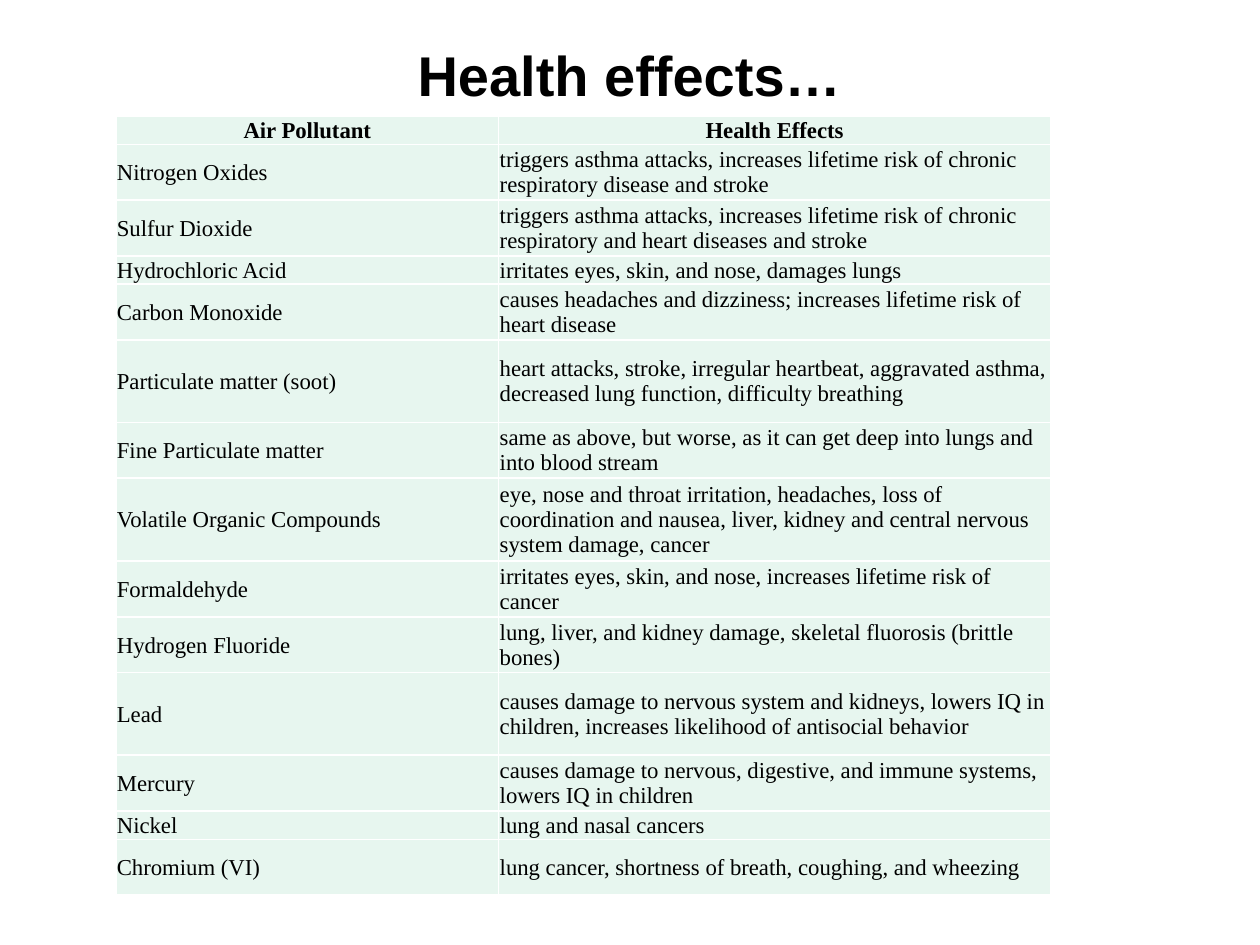
from lxml import etree
from pptx import Presentation
from pptx.dml.color import RGBColor
from pptx.enum import text
from pptx.oxml import ns
from pptx.util import Pt

BLACK = RGBColor(0x00, 0x00, 0x00)
MINT = RGBColor(0xE7, 0xF6, 0xEF)
WHITE = RGBColor(0xFF, 0xFF, 0xFF)

# Row heights: one, two or three lines of text
SHORT, MEDIUM, TALL = 15.9, 31.7, 47.1
COLUMN_WIDTHS = (218.8, 315.2)

HEADINGS = ("Air Pollutant", "Health Effects")
POLLUTANTS = [
    ("Nitrogen Oxides", "triggers asthma attacks, increases lifetime risk of "
     "chronic respiratory disease and stroke", MEDIUM),
    ("Sulfur Dioxide", "triggers asthma attacks, increases lifetime risk of "
     "chronic respiratory and heart diseases and stroke", MEDIUM),
    ("Hydrochloric Acid", "irritates eyes, skin, and nose, damages lungs", SHORT),
    ("Carbon Monoxide", "causes headaches and dizziness; increases lifetime "
     "risk of heart disease", MEDIUM),
    ("Particulate matter (soot)", "heart attacks, stroke, irregular heartbeat, "
     "aggravated asthma, decreased lung function, difficulty breathing", TALL),
    ("Fine Particulate matter", "same as above, but worse, as it can get deep "
     "into lungs and into blood stream", MEDIUM),
    ("Volatile Organic Compounds", "eye, nose and throat irritation, headaches, "
     "loss of coordination and nausea, liver, kidney and central nervous "
     "system damage, cancer", TALL),
    ("Formaldehyde", "irritates eyes, skin, and nose, increases lifetime risk "
     "of cancer", MEDIUM),
    ("Hydrogen Fluoride", "lung, liver, and kidney damage, skeletal fluorosis "
     "(brittle bones)", MEDIUM),
    ("Lead", "causes damage to nervous system and kidneys, lowers IQ in "
     "children, increases likelihood of antisocial behavior", TALL),
    ("Mercury", "causes damage to nervous, digestive, and immune systems, "
     "lowers IQ in children", MEDIUM),
    ("Nickel", "lung and nasal cancers", SHORT),
    ("Chromium (VI)", "lung cancer, shortness of breath, coughing, and "
     "wheezing", MEDIUM),
]


def write(paragraph, words, font_name, size, bold, align):
    paragraph.text = words
    paragraph.alignment = align
    font = paragraph.font
    font.name, font.size, font.bold = font_name, Pt(size), bold
    font.color.rgb = BLACK


def add_title(slide, words):
    title = slide.shapes.add_textbox(Pt(0), Pt(18), Pt(719.3), Pt(48.2))
    frame = title.text_frame
    frame.word_wrap = True
    frame.vertical_anchor = text.MSO_ANCHOR.MIDDLE
    write(frame.paragraphs[0], words, "Arial", 32, True, text.PP_ALIGN.CENTER)


def add_borders(cell):
    properties = cell._tc.get_or_add_tcPr()
    for position, side in enumerate(("a:lnL", "a:lnR", "a:lnT", "a:lnB")):
        line = etree.Element(ns.qn(side), w=str(Pt(1)))
        fill = etree.SubElement(line, ns.qn("a:solidFill"))
        etree.SubElement(fill, ns.qn("a:srgbClr"), val=str(WHITE))
        properties.insert(position, line)


def fill_cell(cell, words, heading):
    cell.fill.solid()
    cell.fill.fore_color.rgb = MINT
    cell.vertical_anchor = text.MSO_ANCHOR.MIDDLE
    cell.margin_left = cell.margin_right = cell.margin_top = Pt(0.6)
    cell.margin_bottom = Pt(0)
    align = text.PP_ALIGN.CENTER if heading else text.PP_ALIGN.LEFT
    write(cell.text_frame.paragraphs[0], words, "Times New Roman", 13, heading, align)
    add_borders(cell)


def add_effects_table(slide):
    rows = [(*HEADINGS, SHORT), *POLLUTANTS]
    total_height = sum(height for *_, height in rows)
    table = slide.shapes.add_table(
        len(rows), len(HEADINGS), Pt(66.2), Pt(66.2),
        Pt(sum(COLUMN_WIDTHS)), Pt(total_height)).table
    for column, width in zip(table.columns, COLUMN_WIDTHS):
        column.width = Pt(width)
    for index, (pollutant, effects, height) in enumerate(rows):
        table.rows[index].height = Pt(height)
        for cell, words in zip(table.rows[index].cells, (pollutant, effects)):
            fill_cell(cell, words, heading=index == 0)


def main():
    presentation = Presentation()
    presentation.slide_width, presentation.slide_height = Pt(720), Pt(540)
    slide = presentation.slides.add_slide(presentation.slide_layouts[6])

    # Title above the table of pollutants
    add_title(slide, "Health effects…")
    add_effects_table(slide)
    presentation.save("out.pptx")


if __name__ == "__main__":
    main()
